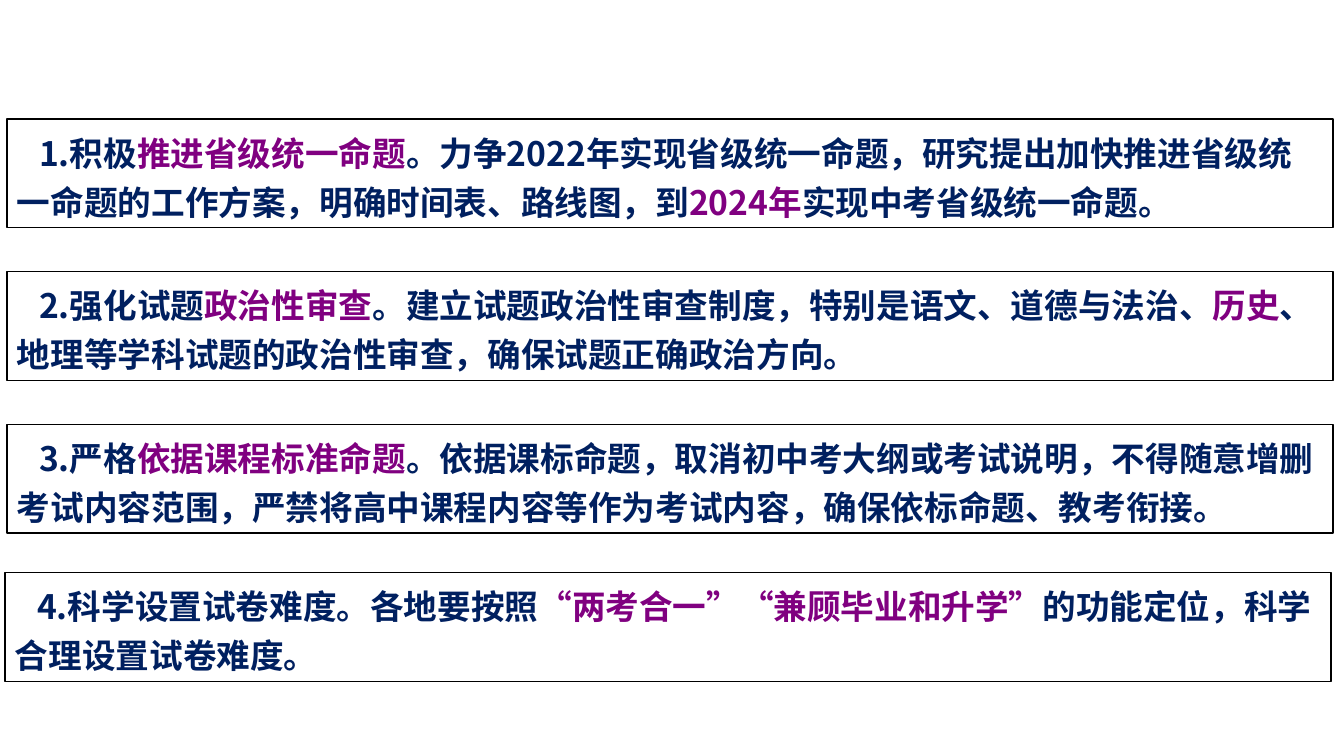
from dataclasses import dataclass

from lxml.etree import SubElement
from pptx import Presentation
from pptx.dml.color import RGBColor
from pptx.enum.lang import MSO_LANGUAGE_ID
from pptx.enum.text import MSO_ANCHOR, MSO_AUTO_SIZE, PP_ALIGN
from pptx.oxml.ns import qn
from pptx.util import Inches, Pt

# Content: each measure is a list of (wording, emphasised) pieces
MEASURES = [
    [("1.积极", False), ("推进省级统一命题", True),
     ("。力争2022年实现省级统一命题，研究提出加快推进省级统一命题的工作方案，"
      "明确时间表、路线图，到", False),
     ("2024年", True), ("实现中考省级统一命题。", False)],
    [("2.强化试题", False), ("政治性审查", True),
     ("。建立试题政治性审查制度，特别是语文、道德与法治、", False),
     ("历史", True),
     ("、地理等学科试题的政治性审查，确保试题正确政治方向。", False)],
    [("3.严格", False), ("依据课程标准命题", True),
     ("。依据课标命题，取消初中考大纲或考试说明，不得随意增删考试内容范围，"
      "严禁将高中课程内容等作为考试内容，确保依标命题、教考衔接。", False)],
    [("4.科学设置试卷难度。各地要按照", False),
     ("“两考合一”“兼顾毕业和升学”", True),
     ("的功能定位，科学合理设置试卷难度。", False)],
]


@dataclass(frozen=True)
class Theme:
    font: str = "Noto Sans CJK SC"
    size: Pt = Pt(24)
    leading: Pt = Pt(35)
    text: RGBColor = RGBColor(0x00, 0x20, 0x60)
    emphasis: RGBColor = RGBColor(0x80, 0x00, 0x80)
    border: RGBColor = RGBColor(0, 0, 0)
    border_width: Pt = Pt(1)


THEME = Theme()

# Grid of one column, in inches; the last row sits slightly up and left
SLIDE_W, SLIDE_H = 13.33, 7.5
LEFT, TOP, ROW_STEP = 0.07, 1.18, 1.515
BOX_W, BOX_H = 13.15, 1.08
LAST_SHIFT = (-0.02, -0.045)
FIRST_LINE_INDENT = Inches(0.22)

FRAME_FORMAT = {
    "word_wrap": True,
    "auto_size": MSO_AUTO_SIZE.SHAPE_TO_FIT_TEXT,
    "vertical_anchor": MSO_ANCHOR.TOP,
}
PARAGRAPH_FORMAT = {"alignment": PP_ALIGN.LEFT, "line_spacing": THEME.leading}
FONT_FORMAT = {
    "name": THEME.font,
    "size": THEME.size,
    "bold": True,
    "language_id": MSO_LANGUAGE_ID.SIMPLIFIED_CHINESE,
}


def apply_format(target, values):
    for attribute, value in values.items():
        setattr(target, attribute, value)


def add_piece(paragraph, wording, emphasised):
    piece = paragraph.add_run()
    piece.text = wording
    apply_format(piece.font, FONT_FORMAT)
    piece.font.color.rgb = THEME.emphasis if emphasised else THEME.text
    # East Asian typeface
    SubElement(piece.font._element, qn("a:ea"), typeface=THEME.font)


def add_measure(slide, left, top, pieces):
    box = slide.shapes.add_textbox(
        Inches(left), Inches(top), Inches(BOX_W), Inches(BOX_H))
    box.line.color.rgb = THEME.border
    box.line.width = THEME.border_width
    apply_format(box.text_frame, FRAME_FORMAT)
    paragraph = box.text_frame.paragraphs[0]
    apply_format(paragraph, PARAGRAPH_FORMAT)
    paragraph._p.get_or_add_pPr().set("indent", str(FIRST_LINE_INDENT))
    for wording, emphasised in pieces:
        add_piece(paragraph, wording, emphasised)


def main():
    deck = Presentation()
    deck.slide_width, deck.slide_height = Inches(SLIDE_W), Inches(SLIDE_H)
    slide = deck.slides.add_slide(deck.slide_layouts[6])

    # Stack of bordered measures
    for row, pieces in enumerate(MEASURES):
        is_last = row == len(MEASURES) - 1
        shift_x, shift_y = LAST_SHIFT if is_last else (0, 0)
        add_measure(slide, LEFT + shift_x, TOP + row * ROW_STEP + shift_y, pieces)

    deck.save("out.pptx")


if __name__ == "__main__":
    main()
